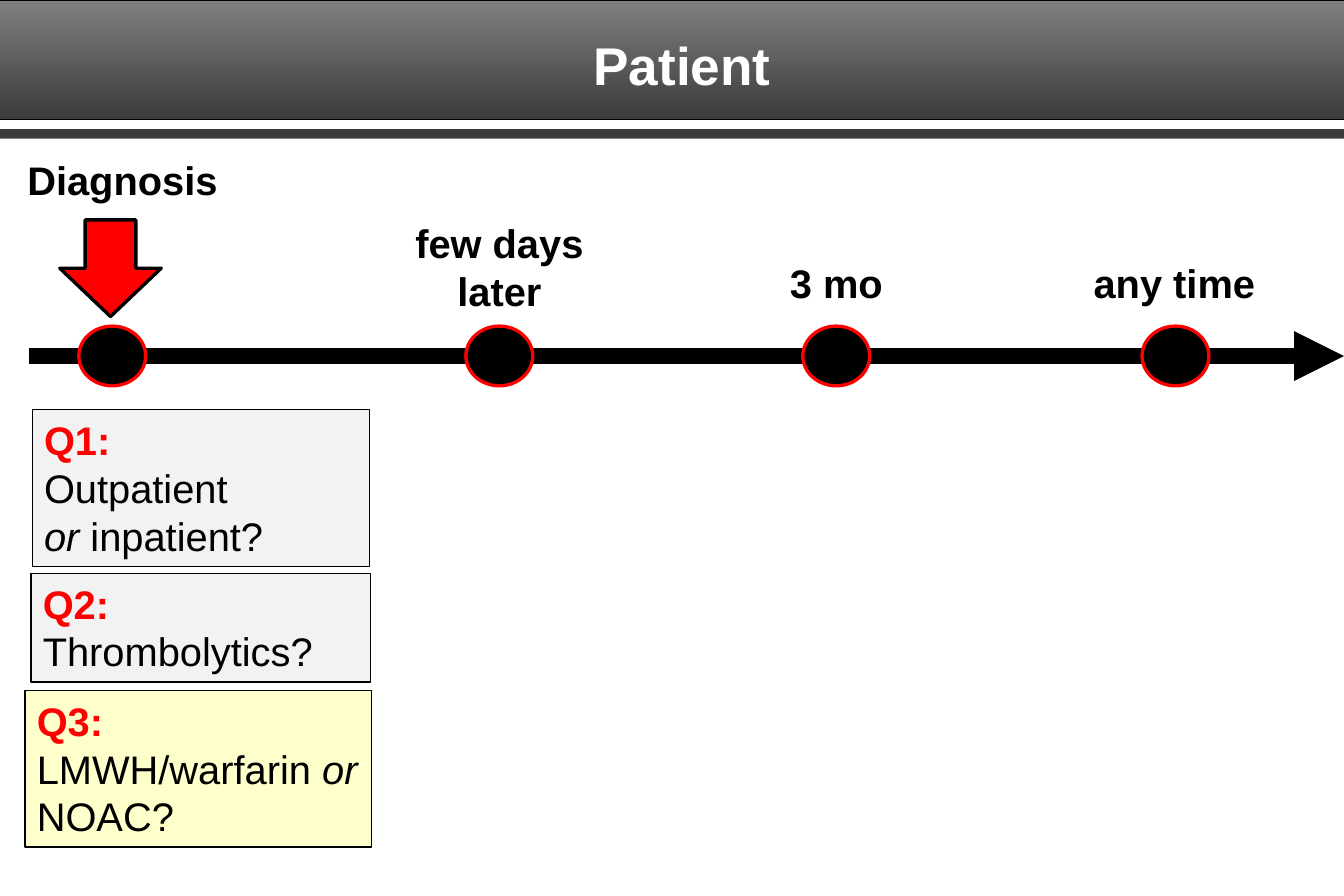
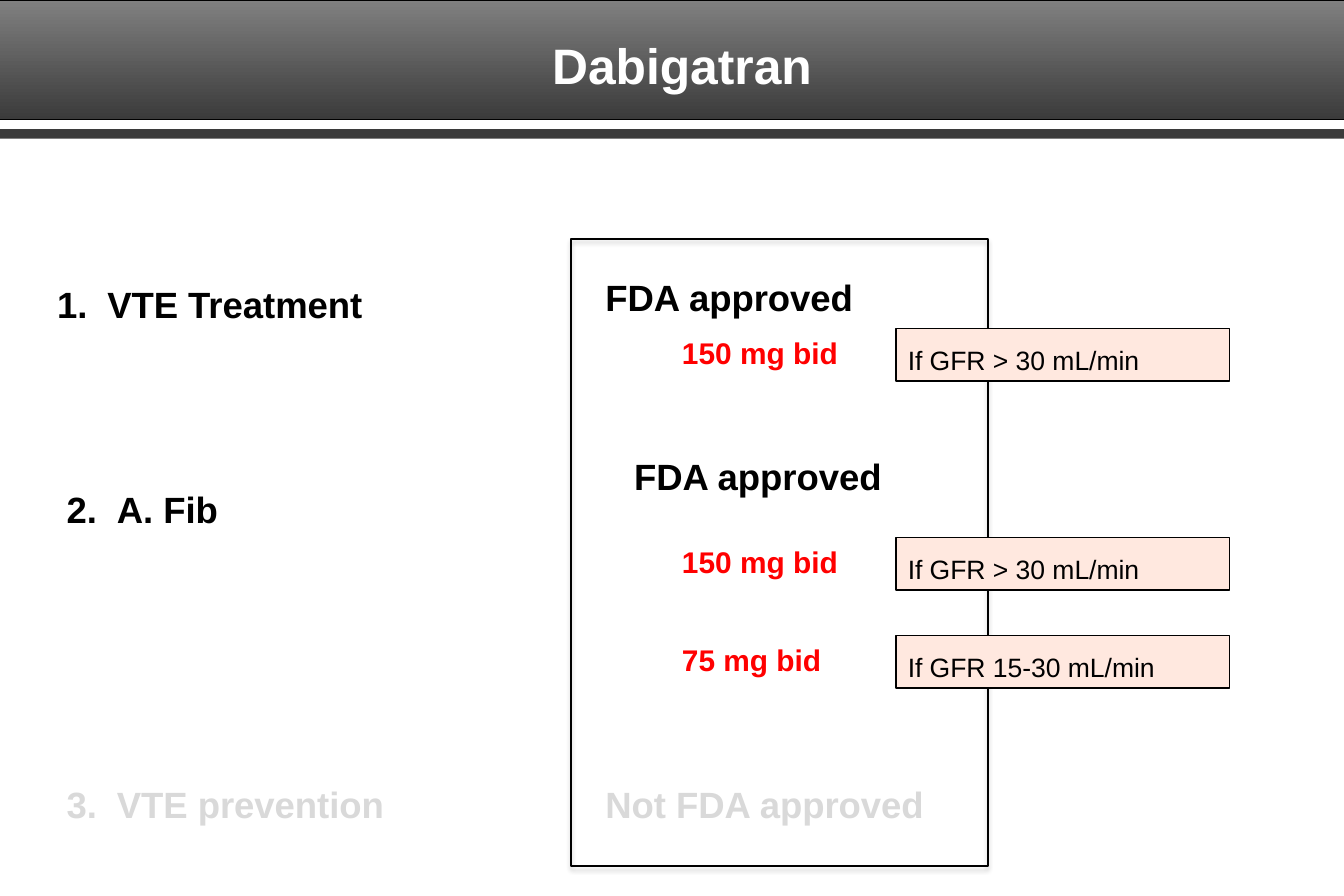
from lxml import etree
from pptx import Presentation
from pptx.dml.color import RGBColor
from pptx.enum import shapes, text
from pptx.oxml import ns
from pptx.util import Inches, Pt

BLACK = RGBColor(0x00, 0x00, 0x00)
WHITE = RGBColor(0xFF, 0xFF, 0xFF)
RED = RGBColor(0xFF, 0x00, 0x00)
BAND_TOP = RGBColor(0x80, 0x80, 0x80)
BAND_BOTTOM = RGBColor(0x3B, 0x3B, 0x3B)
FADED = RGBColor(0xD9, 0xD9, 0xD9)
GRAY = RGBColor(0xF2, 0xF2, 0xF2)
YELLOW = RGBColor(0xFF, 0xFF, 0xCC)
PINK = RGBColor(0xFF, 0xE8, 0xDF)

FONT = "Arial"
WIDTH, HEIGHT = 11.25, 7.5
KIND = shapes.MSO_SHAPE
LEFT, CENTER = text.PP_ALIGN.LEFT, text.PP_ALIGN.CENTER


def sub(parent, tag, **attrs):
    """Append a DrawingML element."""
    return etree.SubElement(parent, ns.qn(tag), {k: str(v) for k, v in attrs.items()})


class Deck:
    def __init__(self):
        self.prs = Presentation()
        self.prs.slide_width, self.prs.slide_height = Inches(WIDTH), Inches(HEIGHT)
        self.s = None

    def slide(self, title, size):
        """Start a slide with the header bands and its title."""
        self.s = self.prs.slides.add_slide(self.prs.slide_layouts[5])
        band = self.shape(KIND.RECTANGLE, -0.1, 0, WIDTH + 0.2, 1, line=BLACK)
        band.fill.gradient()
        band.fill.gradient_angle = 270
        for stop, color in zip(band.fill.gradient_stops, (BAND_TOP, BAND_BOTTOM)):
            stop.color.rgb = color
        self.shape(KIND.RECTANGLE, 0, 1.08, WIDTH, 0.08, BAND_BOTTOM)

        sp = self.s.shapes.title
        sp.left, sp.top, sp.width, sp.height = map(Inches, (0.93, 0.08, 9.56, 0.92))
        tf = sp.text_frame
        tf.vertical_anchor = text.MSO_ANCHOR.MIDDLE
        self.set_text(tf.paragraphs[0], title, size, WHITE, True, CENTER)
        self.s.shapes.element.append(sp.element)  # title in front of the bands

    def shape(self, kind, x, y, w, h, fill=None, line=None, weight=0.75):
        sp = self.s.shapes.add_shape(kind, *map(Inches, (x, y, w, h)))
        sp.shadow.inherit = False
        if fill is None:
            sp.fill.background()
        else:
            sp.fill.solid()
            sp.fill.fore_color.rgb = fill
        if line is None:
            sp.line.fill.background()
        else:
            sp.line.color.rgb = line
            sp.line.width = Pt(weight)
        return sp

    def set_text(self, p, words, size, color=BLACK, bold=False, align=LEFT):
        """Fill a paragraph; words between asterisks are italic."""
        p.alignment = align
        p.font.name, p.font.size, p.font.bold = FONT, Pt(size), bold
        p.font.color.rgb = color
        for i, part in enumerate(words.split("*")):
            if part:
                r = p.add_run()
                r.text = part
                if i % 2:
                    r.font.italic = True

    def label(self, words, x, y, w, h, size, color=BLACK, align=LEFT, number=None):
        tf = self.s.shapes.add_textbox(*map(Inches, (x, y, w, h))).text_frame
        tf.word_wrap = True
        p = tf.paragraphs[0]
        if number:
            pPr = p._p.get_or_add_pPr()
            pPr.set("marL", str(Inches(0.42)))
            pPr.set("indent", str(-Inches(0.42)))
            sub(pPr, "a:buFont", typeface=FONT)
            sub(pPr, "a:buAutoNum", type="arabicPeriod", startAt=number)
        self.set_text(p, words, size, color, True, align)

    def box(self, x, y, w, h, fill, size, lines, heading=None, spacing=None):
        """Outlined box of text with an optional red heading."""
        tf = self.shape(KIND.RECTANGLE, x, y, w, h, fill, BLACK).text_frame
        tf.word_wrap = True
        tf.vertical_anchor = text.MSO_ANCHOR.TOP
        rows = [(heading, RED, True)] if heading else []
        rows += [(words, BLACK, False) for words in lines]
        for i, (words, color, bold) in enumerate(rows):
            p = tf.add_paragraph() if i else tf.paragraphs[0]
            if spacing:
                p.line_spacing = spacing
            self.set_text(p, words, size, color, bold)

    def arrow(self, x1, y1, x2, y2, weight):
        c = self.s.shapes.add_connector(
            shapes.MSO_CONNECTOR.STRAIGHT, *map(Inches, (x1, y1, x2, y2)))
        c.line.color.rgb = BLACK
        c.line.width = Pt(weight)
        sub(c.element.spPr.find(ns.qn("a:ln")), "a:tailEnd", type="triangle")
        sub(c.element.spPr, "a:effectLst")

    def panel(self, x, y, w, h):
        """Unfilled frame with a soft shadow below."""
        sp = self.shape(KIND.RECTANGLE, x, y, w, h, line=BLACK)
        effects = sp.element.spPr.find(ns.qn("a:effectLst"))
        shadow = sub(effects, "a:outerShdw", blurRad=Pt(3.1), dist=Pt(1.8),
                     dir=90 * 60000, rotWithShape=0)
        sub(sub(shadow, "a:srgbClr", val=BLACK), "a:alpha", val=35000)


def patient(d):
    d.slide("Patient", 32)

    # Questions at diagnosis
    for heading, lines, x, y, w, h, fill in (
            ("Q1:", ["Outpatient", "*or* inpatient?"], 0.27, 3.43, 2.82, 1.31, GRAY),
            ("Q2:", ["Thrombolytics?"], 0.26, 4.8, 2.84, 0.91, GRAY),
            ("Q3:", ["LMWH/warfarin *or *NOAC?"], 0.21, 5.78, 2.9, 1.31, YELLOW)):
        d.box(x, y, w, h, fill, 24, lines, heading)

    # Timeline with its milestones
    axis = 2.98
    d.arrow(0.24, axis, WIDTH, axis, 10)
    for center in (0.94, 4.18, 7, 9.84):
        d.shape(KIND.OVAL, center - 0.28, axis - 0.25, 0.56, 0.5, BLACK, RED, 2)
    for words, center, y, h in (("few days later", 4.18, 1.78, 0.91),
                                ("3 mo", 7, 2.12, 0.5),
                                ("any time", 9.83, 2.12, 0.5)):
        d.label(words, center - 1.06, y, 2.12, h, 24, align=CENTER)

    # Starting point
    d.label("Diagnosis", 0.13, 1.25, 2.08, 0.5, 24)
    d.shape(KIND.DOWN_ARROW, 0.5, 1.84, 0.85, 0.81, RED, BLACK, 2)


def dabigatran(d):
    d.slide("Dabigatran", 30)
    d.panel(4.78, 2, 3.49, 5.25)

    # Indications
    for number, (words, x, y, color) in enumerate((
            ("VTE Treatment", 0.38, 2.31, BLACK),
            ("A. Fib", 0.46, 4.03, BLACK),
            ("VTE prevention", 0.46, 6.5, FADED)), 1):
        d.label(words, x, y, 4, 0.47, 22, color, number=number)

    # Approval status
    for words, x, y, color in (("FDA approved", 4.97, 2.25, BLACK),
                               ("FDA approved", 5.21, 3.75, BLACK),
                               ("Not FDA approved", 4.97, 6.5, FADED)):
        d.label(words, x, y, 3.2, 0.47, 22, color)

    # Doses and their kidney function limits
    for dose, limit, y in (("150 mg bid", "> 30", 2.75),
                           ("150 mg bid", "> 30", 4.5),
                           ("75 mg bid", "15-30", 5.32)):
        d.label(dose, 5.61, y, 1.89, 0.4, 18, RED)
        d.box(7.5, y, 2.79, 0.44, PINK, 16, [f"If GFR {limit} mL/min"], spacing=1.3)


def main():
    d = Deck()
    patient(d)
    dabigatran(d)
    d.prs.save("out.pptx")


if __name__ == "__main__":
    main()
